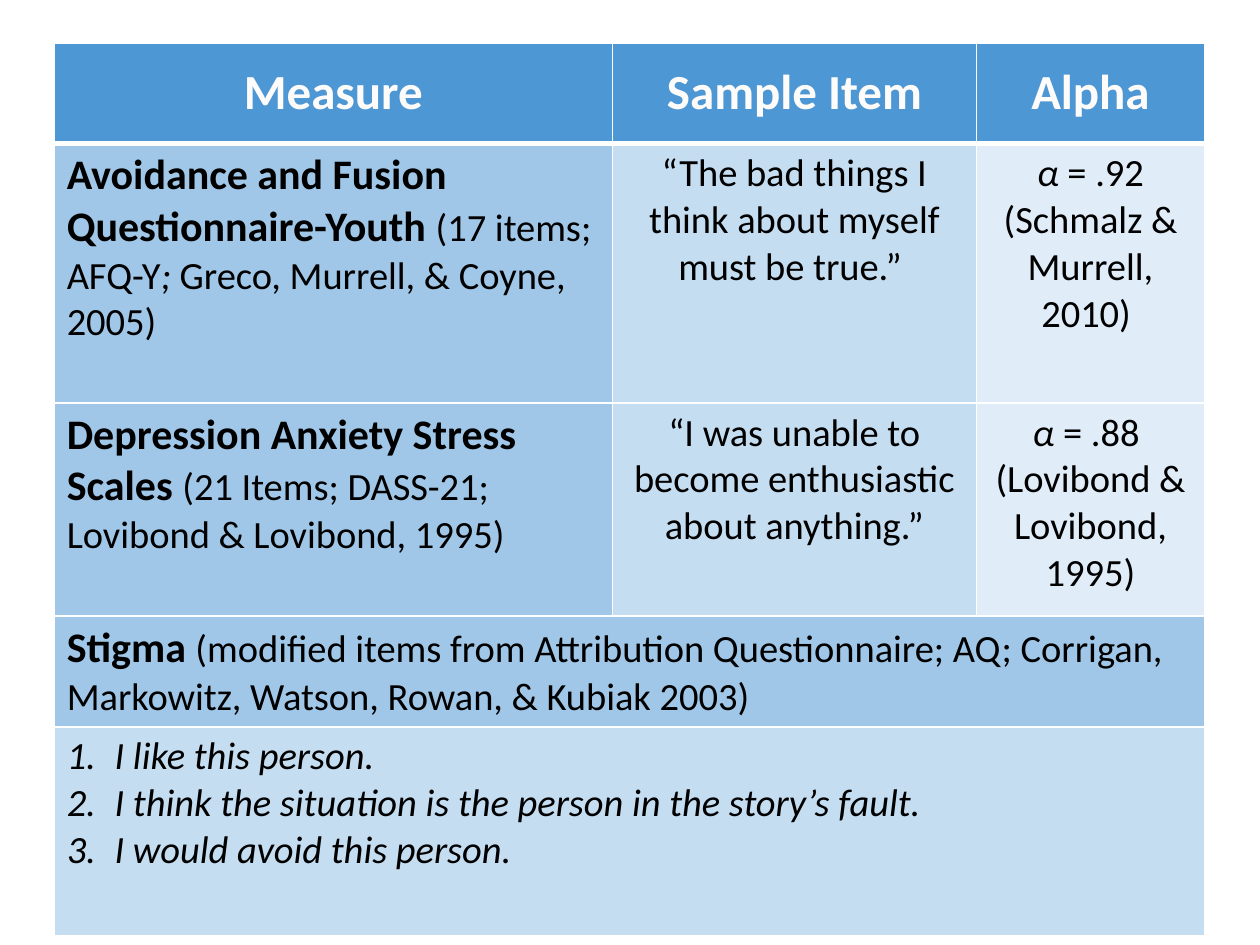
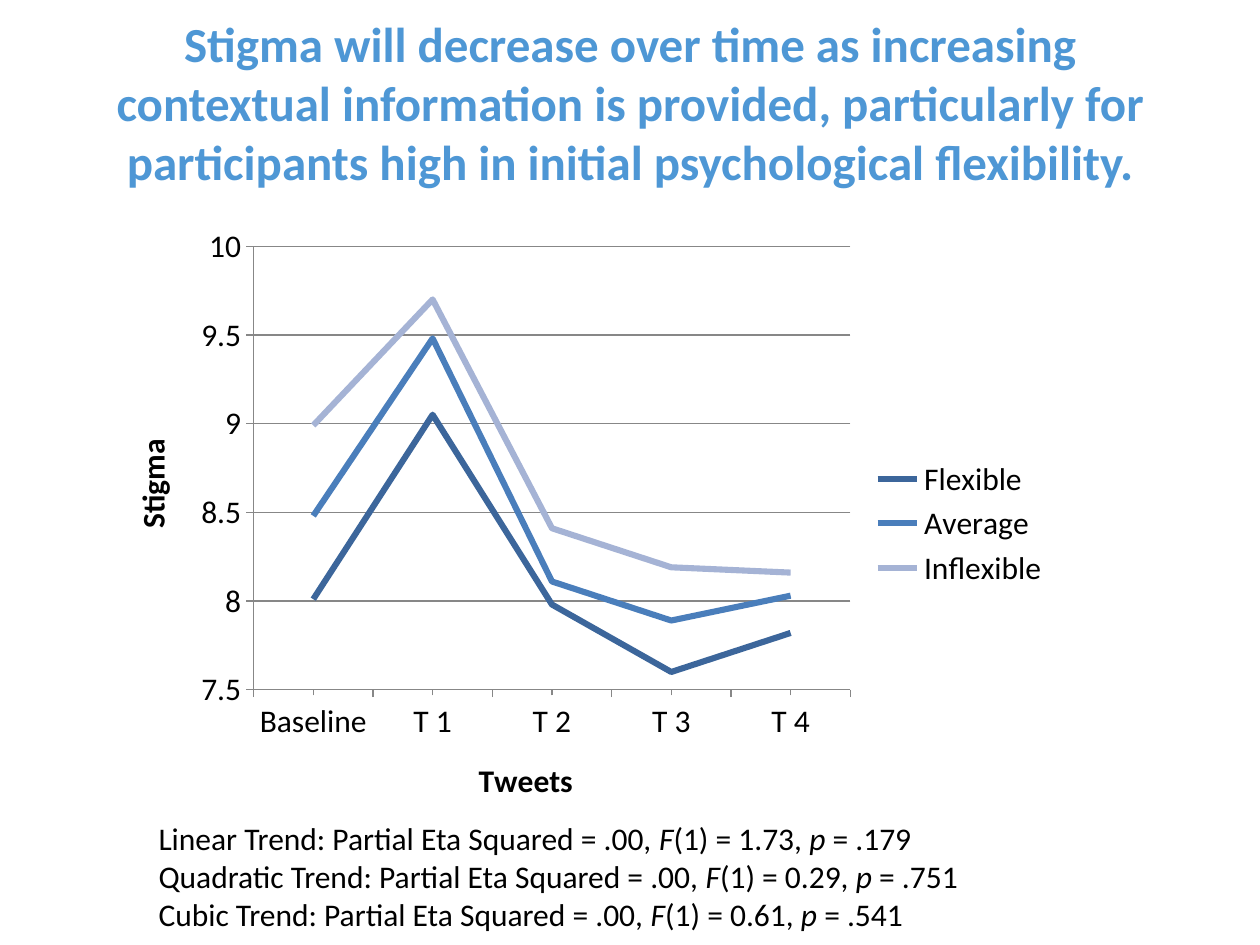
import pptx
import pptx.chart.data
import pptx.dml.color
import pptx.enum.chart
import pptx.enum.text
import pptx.oxml
import pptx.oxml.ns
import pptx.util
from dataclasses import dataclass

Inches = pptx.util.Inches
Pt = pptx.util.Pt
RGBColor = pptx.dml.color.RGBColor
Align = pptx.enum.text.PP_ALIGN
Anchor = pptx.enum.text.MSO_ANCHOR
TickMark = pptx.enum.chart.XL_TICK_MARK


@dataclass(frozen=True)
class Theme:
    font: str = "Calibri"
    accent: str = "4E97D5"
    header_text: str = "FEFCFA"
    text: str = "000000"
    white: str = "FFFFFF"
    axis: str = "878787"
    column_fills: tuple = ("A0C7E8", "C5DDF1", "E0EDF8")
    series: tuple = ("3C669B", "4A7EBB", "A5B3D5")
    heading: int = 28
    measure: int = 24
    body: int = 22
    note: int = 18


THEME = Theme()

HEADERS = ["Measure", "Sample Item", "Alpha"]
MEASURES = [
    [
        [[("Avoidance and Fusion Questionnaire-Youth ", "b"), ("(17 items; AFQ-Y", ""),
          ("; ", "i"), ("Greco, Murrell, & Coyne, 2005)", "")]],
        [[("“The bad things I think about myself must be true.” ", "")]],
        [[("α", "i"), (" = .92 (Schmalz & Murrell, 2010) ", "")]],
    ],
    [
        [[("Depression Anxiety Stress Scales ", "b"),
          ("(21 Items; DASS-21; Lovibond & Lovibond, 1995)", "")]],
        [[("“I was unable to become enthusiastic about anything.”", "")]],
        [[("α", "i"), (" = .88 ", "")], [("(Lovibond & Lovibond, 1995)", "")]],
    ],
]
STIGMA = [[("Stigma ", "b"),
           ("(modified items from Attribution Questionnaire; AQ; Corrigan, "
            "Markowitz, Watson, Rowan, & Kubiak 2003)", "")]]
STIGMA_ITEMS = [
    "I like this person.",
    "I think the situation is the person in the story’s fault.",
    "I would avoid this person.",
]
COLUMN_WIDTHS = [4.43, 2.89, 1.81]
ROW_HEIGHTS = [0.8, 2.06, 1.69, 0.88, 1.66]

HYPOTHESIS = ("Stigma will decrease over time as increasing contextual information is provided, "
              "particularly for participants high in initial psychological flexibility.")
TIMES = ["Baseline", "T 1", "T 2", "T 3", "T 4"]
STIGMA_BY_GROUP = {
    "Flexible ": [8.01, 9.05, 7.98, 7.6, 7.82],
    "Average": [8.48, 9.48, 8.11, 7.89, 8.03],
    "Inflexible": [8.99, 9.7, 8.41, 8.19, 8.16],
}
PLOT_LAYOUT = {"x": 0.16, "y": 0.05, "w": 0.62, "h": 0.72}
TRENDS = [("Linear", "1.73", ".179"), ("Quadratic", "0.29", ".751"), ("Cubic", "0.61", ".541")]


def format_font(font, size, color, bold=False, italic=False):
    font.name = THEME.font
    font.size = Pt(size)
    font.bold = bold
    font.italic = italic
    font.color.rgb = RGBColor.from_string(color)


def write_paragraphs(text_frame, paragraphs, size, bold_size=None, color=THEME.text, align=Align.LEFT):
    for index, pieces in enumerate(paragraphs):
        paragraph = text_frame.add_paragraph() if index else text_frame.paragraphs[0]
        paragraph.alignment = align
        for text, style in pieces:
            run = paragraph.add_run()
            run.text = text
            bold = "b" in style
            format_font(run.font, bold_size if bold and bold_size else size, color, bold, "i" in style)


def style_cell(cell, fill, bottom_width=1):
    properties = cell._tc.get_or_add_tcPr()
    for side in "LRTB":
        width = Pt(bottom_width if side == "B" else 1)
        properties.append(pptx.oxml.parse_xml(
            f'<a:ln{side} {pptx.oxml.ns.nsdecls("a")} w="{width}"><a:solidFill>'
            f'<a:srgbClr val="{THEME.white}"/></a:solidFill></a:ln{side}>'))
    cell.fill.solid()
    cell.fill.fore_color.rgb = RGBColor.from_string(fill)


def number_paragraph(paragraph):
    properties = paragraph._p.get_or_add_pPr()
    properties.set("marL", str(Inches(0.38)))
    properties.set("indent", str(-Inches(0.38)))
    properties.append(pptx.oxml.parse_xml(
        f'<a:buAutoNum {pptx.oxml.ns.nsdecls("a")} type="arabicPeriod"/>'))


def add_measures_slide(presentation):
    slide = presentation.slides.add_slide(presentation.slide_layouts[6])
    table = slide.shapes.add_table(
        len(ROW_HEIGHTS), len(COLUMN_WIDTHS), Inches(0.43), Inches(0.34),
        Inches(sum(COLUMN_WIDTHS)), Inches(sum(ROW_HEIGHTS))).table
    for column, width in zip(table.columns, COLUMN_WIDTHS):
        column.width = Inches(width)
    for row, height in zip(table.rows, ROW_HEIGHTS):
        row.height = Inches(height)

    for column, header in enumerate(HEADERS):
        cell = table.cell(0, column)
        style_cell(cell, THEME.accent, 3)
        cell.vertical_anchor = Anchor.MIDDLE
        write_paragraphs(cell.text_frame, [[(header, "b")]], THEME.heading,
                         color=THEME.header_text, align=Align.CENTER)

    for row, measure in enumerate(MEASURES, 1):
        for column, paragraphs in enumerate(measure):
            cell = table.cell(row, column)
            style_cell(cell, THEME.column_fills[column])
            write_paragraphs(cell.text_frame, paragraphs, THEME.body, THEME.measure,
                             align=Align.CENTER if column else Align.LEFT)

    items = [[(item, "i")] for item in STIGMA_ITEMS]
    first_wide_row = 1 + len(MEASURES)
    for row, paragraphs in enumerate([STIGMA, items], first_wide_row):
        for column in range(len(COLUMN_WIDTHS)):
            style_cell(table.cell(row, column), THEME.column_fills[row - first_wide_row])
        table.cell(row, 0).merge(table.cell(row, len(COLUMN_WIDTHS) - 1))
        write_paragraphs(table.cell(row, 0).text_frame, paragraphs, THEME.body, THEME.measure)
    for paragraph in table.cell(first_wide_row + 1, 0).text_frame.paragraphs:
        number_paragraph(paragraph)


def format_axis(axis, title):
    axis.has_title = True
    axis.axis_title.text_frame.text = title
    run = axis.axis_title.text_frame.paragraphs[0].runs[0]
    format_font(run.font, THEME.note, THEME.text, bold=True)
    axis.major_tick_mark = TickMark.OUTSIDE
    axis.format.line.color.rgb = RGBColor.from_string(THEME.axis)
    axis.format.line.width = Pt(0.75)


def add_stigma_chart(slide):
    chart_data = pptx.chart.data.CategoryChartData()
    chart_data.categories = TIMES
    for group, values in STIGMA_BY_GROUP.items():
        chart_data.add_series(group, values)
    chart = slide.shapes.add_chart(
        pptx.enum.chart.XL_CHART_TYPE.LINE, Inches(0.79), Inches(1.71),
        Inches(7.64), Inches(4.89), chart_data).chart
    chart.has_title = False
    format_font(chart.font, THEME.note, THEME.text)
    chart.has_legend = True
    chart.legend.position = pptx.enum.chart.XL_LEGEND_POSITION.RIGHT
    chart.legend.include_in_layout = False

    format_axis(chart.category_axis, "Tweets")
    chart.category_axis.minor_tick_mark = TickMark.OUTSIDE
    value_axis = chart.value_axis
    format_axis(value_axis, "Stigma")
    value_axis.minimum_scale = 7.5
    value_axis.maximum_scale = 10
    value_axis.major_unit = 0.5
    value_axis.tick_labels.number_format = "General"
    value_axis.tick_labels.number_format_is_linked = False
    value_axis.has_major_gridlines = True
    gridline = value_axis.major_gridlines.format.line
    gridline.color.rgb = RGBColor.from_string(THEME.axis)
    gridline.width = Pt(0.75)

    plot = chart.plots[0]
    plot.vary_by_categories = False
    for series, color in zip(plot.series, THEME.series):
        series.smooth = False
        series.marker.style = pptx.enum.chart.XL_MARKER_STYLE.NONE
        series.format.line.color.rgb = RGBColor.from_string(color)
        series.format.line.width = Pt(3.5)

    plot_area = chart._chartSpace.chart.plotArea
    for layout in plot_area.findall(pptx.oxml.ns.qn("c:layout")):
        plot_area.remove(layout)
    sizes = "".join(f'<c:{key} val="{value}"/>' for key, value in PLOT_LAYOUT.items())
    plot_area.insert(0, pptx.oxml.parse_xml(
        f'<c:layout {pptx.oxml.ns.nsdecls("c")}><c:manualLayout><c:layoutTarget val="inner"/>'
        f'<c:xMode val="edge"/><c:yMode val="edge"/>{sizes}</c:manualLayout></c:layout>'))


def add_results_slide(presentation):
    slide = presentation.slides.add_slide(presentation.slide_layouts[5])
    title = slide.shapes.title
    title.left, title.top, title.width, title.height = map(Inches, (0.5, 0.06, 9, 1.25))
    frame = title.text_frame
    frame.auto_size = pptx.enum.text.MSO_AUTO_SIZE.NONE
    frame.vertical_anchor = Anchor.TOP
    write_paragraphs(frame, [[(HYPOTHESIS, "b")]], THEME.heading,
                     color=THEME.accent, align=Align.CENTER)

    add_stigma_chart(slide)

    notes = slide.shapes.add_textbox(Inches(1.16), Inches(6.45), Inches(6.65), Inches(1.01))
    notes.text_frame.word_wrap = False
    notes.text_frame.auto_size = pptx.enum.text.MSO_AUTO_SIZE.SHAPE_TO_FIT_TEXT
    trend_lines = [
        [(f"{trend} Trend: Partial Eta Squared = .00, ", ""), ("F", "i"),
         (f"(1) = {f_value}, ", ""), ("p", "i"), (f" = {p_value}", "")]
        for trend, f_value, p_value in TRENDS
    ]
    write_paragraphs(notes.text_frame, trend_lines, THEME.note)


def main():
    presentation = pptx.Presentation()
    presentation.slide_width = Inches(10)
    presentation.slide_height = Inches(7.5)
    add_measures_slide(presentation)
    add_results_slide(presentation)
    presentation.save("out.pptx")


if __name__ == "__main__":
    main()
